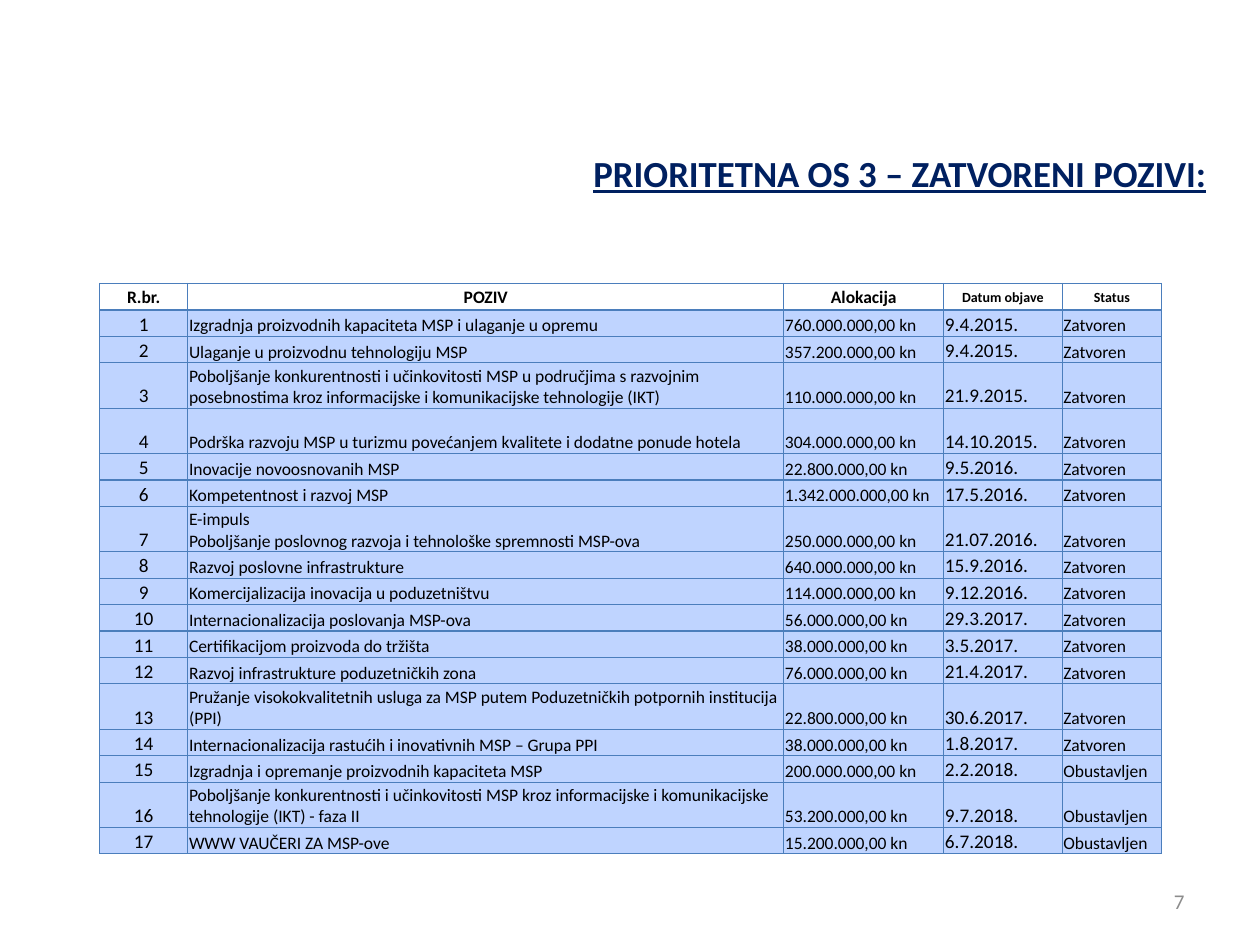
from lxml import etree
from pptx import Presentation
from pptx import util as u
from pptx.dml.color import RGBColor
from pptx.enum import text
from pptx.oxml.ns import qn

COLORS = {"navy": "002060", "black": "000000", "grey": "8C8C8C",
          "white": "FFFFFF", "body": "BFD4FF", "border": "4B7EBC"}
LEFT, CENTER, RIGHT = text.PP_ALIGN.LEFT, text.PP_ALIGN.CENTER, text.PP_ALIGN.RIGHT
TOP, MIDDLE, BOTTOM = (text.MSO_ANCHOR.TOP, text.MSO_ANCHOR.MIDDLE,
                       text.MSO_ANCHOR.BOTTOM)

HEADERS = ["R.br.", "POZIV", "Alokacija", "Datum objave", "Status"]
HEADER_SIZES = [10, 10, 10, 8, 8]
BODY_SIZES = [11, 10, 10, 11, 10]
COL_WIDTHS = [0.7, 4.73, 1.27, 0.94, 0.79]
ROW_HEIGHT, TALL_HEIGHT = 0.21, 0.36
TALL_ROWS = {3, 4, 7, 13, 16}
FIRST_SUSPENDED = 15

# Call, allocation in kn, publication date
CALLS = [
    ("Izgradnja proizvodnih kapaciteta MSP i ulaganje u opremu", "760.000.000,00", "9.4.2015."),
    ("Ulaganje u proizvodnu tehnologiju MSP", "357.200.000,00", "9.4.2015."),
    ("Poboljšanje konkurentnosti i učinkovitosti MSP u područjima s razvojnim "
     "posebnostima kroz informacijske i komunikacijske tehnologije (IKT)",
     "110.000.000,00", "21.9.2015."),
    ("Podrška razvoju MSP u turizmu povećanjem kvalitete i dodatne ponude hotela",
     "304.000.000,00", "14.10.2015."),
    ("Inovacije novoosnovanih MSP", "22.800.000,00", "9.5.2016."),
    ("Kompetentnost i razvoj MSP", "1.342.000.000,00", "17.5.2016."),
    ("E-impuls\nPoboljšanje poslovnog razvoja i tehnološke spremnosti MSP-ova",
     "250.000.000,00", "21.07.2016."),
    ("Razvoj poslovne infrastrukture", "640.000.000,00", "15.9.2016."),
    ("Komercijalizacija inovacija u poduzetništvu", "114.000.000,00", "9.12.2016."),
    ("Internacionalizacija poslovanja MSP-ova", "56.000.000,00", "29.3.2017."),
    ("Certifikacijom proizvoda do tržišta", "38.000.000,00", "3.5.2017."),
    ("Razvoj infrastrukture poduzetničkih zona", "76.000.000,00", "21.4.2017."),
    ("Pružanje visokokvalitetnih usluga za MSP putem Poduzetničkih potpornih "
     "institucija (PPI)", "22.800.000,00", "30.6.2017."),
    ("Internacionalizacija rastućih i inovativnih MSP – Grupa PPI",
     "38.000.000,00", "1.8.2017."),
    ("Izgradnja i opremanje proizvodnih kapaciteta MSP", "200.000.000,00", "2.2.2018."),
    ("Poboljšanje konkurentnosti i učinkovitosti MSP kroz informacijske i "
     "komunikacijske tehnologije (IKT) - faza II", "53.200.000,00", "9.7.2018."),
    ("WWW VAUČERI ZA MSP-ove", "15.200.000,00", "6.7.2018."),
]


class Deck:
    font = "Calibri"

    def __init__(self):
        self.prs = Presentation()
        self.prs.slide_width, self.prs.slide_height = u.Inches(10), u.Inches(7.5)
        self.s = self.prs.slides.add_slide(self.prs.slide_layouts[5])

    def add_text(self, tf, content, size, color="black", align=LEFT, bold=False,
                 underline=False):
        p = tf.paragraphs[0]
        p.alignment = align
        for i, line in enumerate(content.split("\n")):
            if i:
                p.add_line_break()
            r = p.add_run()
            r.text = line
            r.font.name, r.font.size = self.font, u.Pt(size)
            r.font.bold, r.font.underline = bold, underline
            r.font.color.rgb = RGBColor.from_string(COLORS[color])

    def title(self, content, x, y, w, h):
        sp = self.s.shapes.title
        sp.left, sp.top, sp.width, sp.height = map(u.Inches, (x, y, w, h))
        tf = sp.text_frame
        tf.word_wrap = False
        tf.auto_size = text.MSO_AUTO_SIZE.NONE
        tf.vertical_anchor = TOP
        self.add_text(tf, content, 21, "navy", bold=True, underline=True)

    def label(self, content, x, y, w, h):
        sp = self.s.shapes.add_textbox(*map(u.Inches, (x, y, w, h)))
        tf = sp.text_frame
        tf.word_wrap = True
        tf.vertical_anchor = MIDDLE
        self.add_text(tf, content, 12, "grey", RIGHT)

    def borders(self, cell):
        tc_pr = cell._tc.get_or_add_tcPr()
        for side in ("lnL", "lnR", "lnT", "lnB"):
            ln = etree.SubElement(tc_pr, qn(f"a:{side}"), w=str(u.Pt(0.75)))
            fill = etree.SubElement(ln, qn("a:solidFill"))
            etree.SubElement(fill, qn("a:srgbClr"), val=COLORS["border"])

    def cell(self, cell, content, size, fill, anchor, align, bold):
        cell.margin_left = cell.margin_right = cell.margin_top = u.Inches(0.01)
        cell.margin_bottom = 0
        cell.vertical_anchor = anchor
        self.borders(cell)
        cell.fill.solid()
        cell.fill.fore_color.rgb = RGBColor.from_string(COLORS[fill])
        self.add_text(cell.text_frame, content, size, align=align, bold=bold)

    def table(self, rows, x, y):
        heights = [TALL_HEIGHT if i in TALL_ROWS else ROW_HEIGHT
                   for i in range(len(rows))]
        box = map(u.Inches, (x, y, sum(COL_WIDTHS), sum(heights)))
        table = self.s.shapes.add_table(len(rows), len(COL_WIDTHS), *box).table
        table.first_row = table.horz_banding = False
        for column, width in zip(table.columns, COL_WIDTHS):
            column.width = u.Inches(width)
        for i, (row, height) in enumerate(zip(rows, heights)):
            table.rows[i].height = u.Inches(height)
            for j, content in enumerate(row):
                if i == 0:
                    style = HEADER_SIZES[j], "white", MIDDLE, CENTER, True
                else:
                    style = BODY_SIZES[j], "body", BOTTOM, LEFT if j else CENTER, False
                self.cell(table.cell(i, j), content, *style)


def main():
    deck = Deck()

    # Table of closed calls
    rows = [HEADERS]
    for n, (call, amount, date) in enumerate(CALLS, 1):
        status = "Obustavljen" if n >= FIRST_SUSPENDED else "Zatvoren"
        rows.append([str(n), call, f"{amount} kn", date, status])
    deck.table(rows, 0.79, 2.25)

    # Title and page number
    deck.title("PRIORITETNA OS 3 – ZATVORENI POZIVI:", 4.61, 1.15, 5.12, 1.16)
    deck.label("7", 7.17, 6.95, 2.33, 0.4)

    deck.prs.save("out.pptx")


if __name__ == "__main__":
    main()
